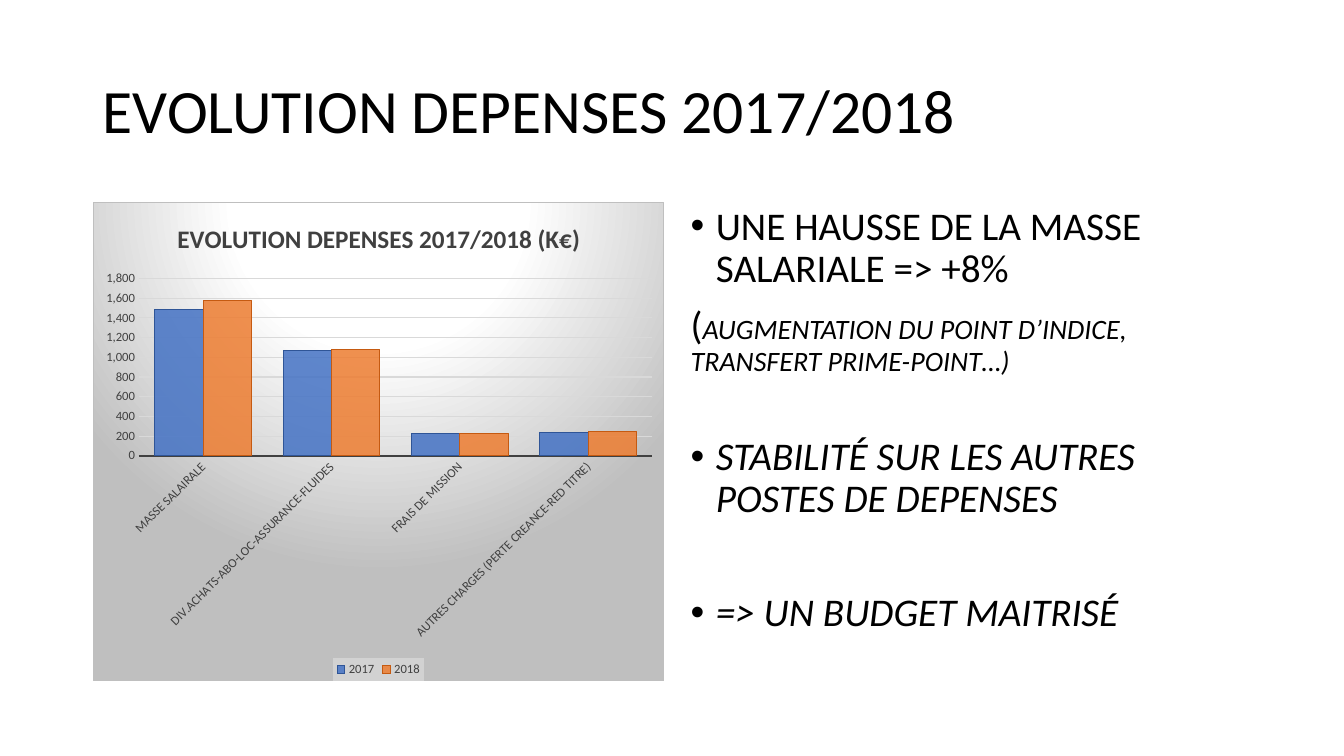
from dataclasses import dataclass

from lxml.etree import fromstring
from pptx import Presentation
from pptx.chart.data import CategoryChartData
from pptx.dml.color import RGBColor
from pptx.enum.chart import XL_CHART_TYPE as ChartType
from pptx.enum.chart import XL_LEGEND_POSITION as LegendPos
from pptx.enum.chart import XL_TICK_MARK as Tick
from pptx.enum.text import MSO_ANCHOR as Anchor
from pptx.enum.text import MSO_AUTO_SIZE as AutoSize
from pptx.enum.text import PP_ALIGN as Align
from pptx.oxml.ns import qn
from pptx.util import Pt

PX = 9144
NS = (
    'xmlns:a="http://schemas.openxmlformats.org/drawingml/2006/main" '
    'xmlns:c="http://schemas.openxmlformats.org/drawingml/2006/chart"'
)


@dataclass(frozen=True)
class Theme:
    font: str = "Calibri"
    text: str = "000000"
    chart_text: str = "404040"
    grid: str = "D9D9D9"
    chart_light: str = "FFFFFF"
    chart_dark: str = "BFBFBF"
    legend_fill: str = "F2F2F2"
    title: int = 44
    body: int = 28
    detail: int = 20
    chart_title: int = 18
    chart_label: int = 9
    hairline: float = 0.75
    axis_line: float = 1.5


@dataclass(frozen=True)
class Box:
    x: int
    y: int
    w: int
    h: int

    def emu(self) -> tuple[int, ...]:
        return tuple(v * PX for v in (self.x, self.y, self.w, self.h))


@dataclass(frozen=True)
class Run:
    text: str
    size: int
    italic: bool = False


@dataclass(frozen=True)
class Para:
    runs: tuple[Run, ...]
    before: int = 10
    bullet: bool = True


@dataclass(frozen=True)
class Series:
    name: str
    values: tuple[int, ...]
    fill: str
    line: str


T = Theme()
TITLE = Box(92, 40, 1150, 145)
CHART = Box(92, 200, 567, 476)
BODY = Box(675, 200, 567, 476)
INDENT = 25

PARAS = (
    Para((Run("UNE HAUSSE DE LA MASSE SALARIALE => +8%", T.body),)),
    Para(
        (
            Run("(", T.body),
            Run("AUGMENTATION DU POINT D’INDICE, TRANSFERT PRIME-POINT…)", T.detail, True),
        ),
        bullet=False,
    ),
    Para((Run("STABILITÉ SUR LES AUTRES POSTES DE DEPENSES", T.body, True),), before=42),
    Para((Run("=> UN BUDGET MAITRISÉ", T.body, True),), before=51),
)
CATEGORIES = (
    "MASSE SALAIRALE",
    "DIV.ACHATS-ABO-LOC-ASSURANCE-FLUIDES",
    "FRAIS DE MISSION",
    "AUTRES CHARGES (PERTE CREANCE-RED TITRE)",
)
SERIES = (
    Series("2017", (1490, 1070, 230, 240), "4472C4", "2F5597"),
    Series("2018", (1580, 1080, 230, 250), "ED7D31", "C55A11"),
)


def rgb(color: str) -> RGBColor:
    return RGBColor.from_string(color)


def set_font(font, size: int, color: str) -> None:
    font.name = T.font
    font.size = Pt(size)
    font.color.rgb = rgb(color)


def set_line(line, color: str, width: float) -> None:
    line.color.rgb = rgb(color)
    line.width = Pt(width)


def place(sp, box: Box) -> None:
    sp.left, sp.top, sp.width, sp.height = box.emu()


def add_run(p, run: Run) -> None:
    r = p.add_run()
    r.text = run.text
    r.font.italic = run.italic
    set_font(r.font, run.size, T.text)


def fill_title(sp) -> None:
    place(sp, TITLE)
    tf = sp.text_frame
    tf.vertical_anchor = Anchor.MIDDLE
    p = tf.paragraphs[0]
    p.alignment = Align.LEFT
    p.line_spacing = 0.9
    add_run(p, Run("EVOLUTION DEPENSES 2017/2018", T.title))


def fill_body(sp) -> None:
    place(sp, BODY)
    tf = sp.text_frame
    tf.auto_size = AutoSize.NONE
    for i, para in enumerate(PARAS):
        p = tf.add_paragraph() if i else tf.paragraphs[0]
        p.line_spacing = 0.9
        p.space_before = Pt(para.before)
        indent = INDENT * PX if para.bullet else 0
        pPr = p._p.get_or_add_pPr()
        pPr.set("marL", str(indent))
        pPr.set("indent", str(-indent))
        bullet = '<a:buChar {} char="•"/>' if para.bullet else "<a:buNone {}/>"
        pPr.append(fromstring(bullet.format(NS)))
        for run in para.runs:
            add_run(p, run)


def add_chart(s) -> None:
    data = CategoryChartData(number_format="#,##0")
    data.categories = CATEGORIES
    for item in SERIES:
        data.add_series(item.name, item.values)
    chart = s.shapes.add_chart(ChartType.COLUMN_CLUSTERED, *CHART.emu(), data).chart
    set_font(chart.font, 10, T.text)
    p = chart.chart_title.text_frame.paragraphs[0]
    r = p.add_run()
    r.text = "EVOLUTION DEPENSES 2017/2018 (K€)"
    r.font.bold = True
    set_font(r.font, T.chart_title, T.chart_text)

    plot = chart.plots[0]
    plot.gap_width = 65
    plot.overlap = 0
    plot.vary_by_categories = False
    for ser, item in zip(plot.series, SERIES):
        ser.format.fill.solid()
        ser.format.fill.fore_color.rgb = rgb(item.fill)
        color = ser._element.spPr.find(f"{qn('a:solidFill')}/{qn('a:srgbClr')}")
        color.append(fromstring(f'<a:alpha {NS} val="85000"/>'))
        set_line(ser.format.line, item.line, T.hairline)

    cat, val = chart.category_axis, chart.value_axis
    for axis in (cat, val):
        axis.major_tick_mark = axis.minor_tick_mark = Tick.NONE
        set_font(axis.tick_labels.font, T.chart_label, T.chart_text)
    set_line(cat.format.line, T.chart_text, T.axis_line)
    cat._element.find(f"{qn('c:txPr')}/{qn('a:bodyPr')}").set("rot", "-2700000")
    val.format.line.fill.background()
    val.minimum_scale, val.maximum_scale, val.major_unit = 0, 1800, 200
    val.tick_labels.number_format = "#,##0"
    val.tick_labels.number_format_is_linked = False
    set_line(val.major_gridlines.format.line, T.grid, T.hairline)

    chart.has_legend = True
    legend = chart.legend
    legend.position = LegendPos.BOTTOM
    legend.include_in_layout = False
    set_font(legend.font, T.chart_label, T.chart_text)
    style_areas(chart)


def style_areas(chart) -> None:
    chart.legend._element.find(qn("c:txPr")).addprevious(fromstring(
        f'<c:spPr {NS}><a:solidFill><a:srgbClr val="{T.legend_fill}">'
        '<a:alpha val="39000"/></a:srgbClr></a:solidFill></c:spPr>'
    ))
    stops = ((0, T.chart_light), (39, T.chart_light), (100, T.chart_dark))
    gs = "".join(f'<a:gs pos="{pos}000"><a:srgbClr val="{c}"/></a:gs>' for pos, c in stops)
    root = chart._chartSpace.find(qn("c:chart"))
    root.addnext(fromstring(
        f'<c:spPr {NS}><a:gradFill><a:gsLst>{gs}</a:gsLst><a:path path="circle">'
        '<a:fillToRect l="50000" t="-80000" r="50000" b="180000"/></a:path></a:gradFill>'
        f'<a:ln w="{Pt(T.hairline)}"><a:solidFill><a:srgbClr val="{T.chart_dark}"/>'
        "</a:solidFill></a:ln></c:spPr>"
    ))
    area = root.find(qn("c:plotArea"))
    for old in area.findall(qn("c:layout")):
        area.remove(old)
    frame = (("x", 0.08), ("y", 0.16), ("w", 0.9), ("h", 0.37))
    sizes = "".join(f'<c:{k} val="{v}"/>' for k, v in frame)
    area.insert(0, fromstring(
        f'<c:layout {NS}><c:manualLayout><c:layoutTarget val="inner"/>'
        f'<c:xMode val="edge"/><c:yMode val="edge"/>{sizes}</c:manualLayout></c:layout>'
    ))


def main() -> None:
    prs = Presentation()
    prs.slide_width, prs.slide_height = 1333 * PX, 750 * PX
    s = prs.slides.add_slide(prs.slide_layouts[1])
    fill_title(s.shapes.title)
    fill_body(s.placeholders[1])
    add_chart(s)
    prs.save("out.pptx")


if __name__ == "__main__":
    main()
